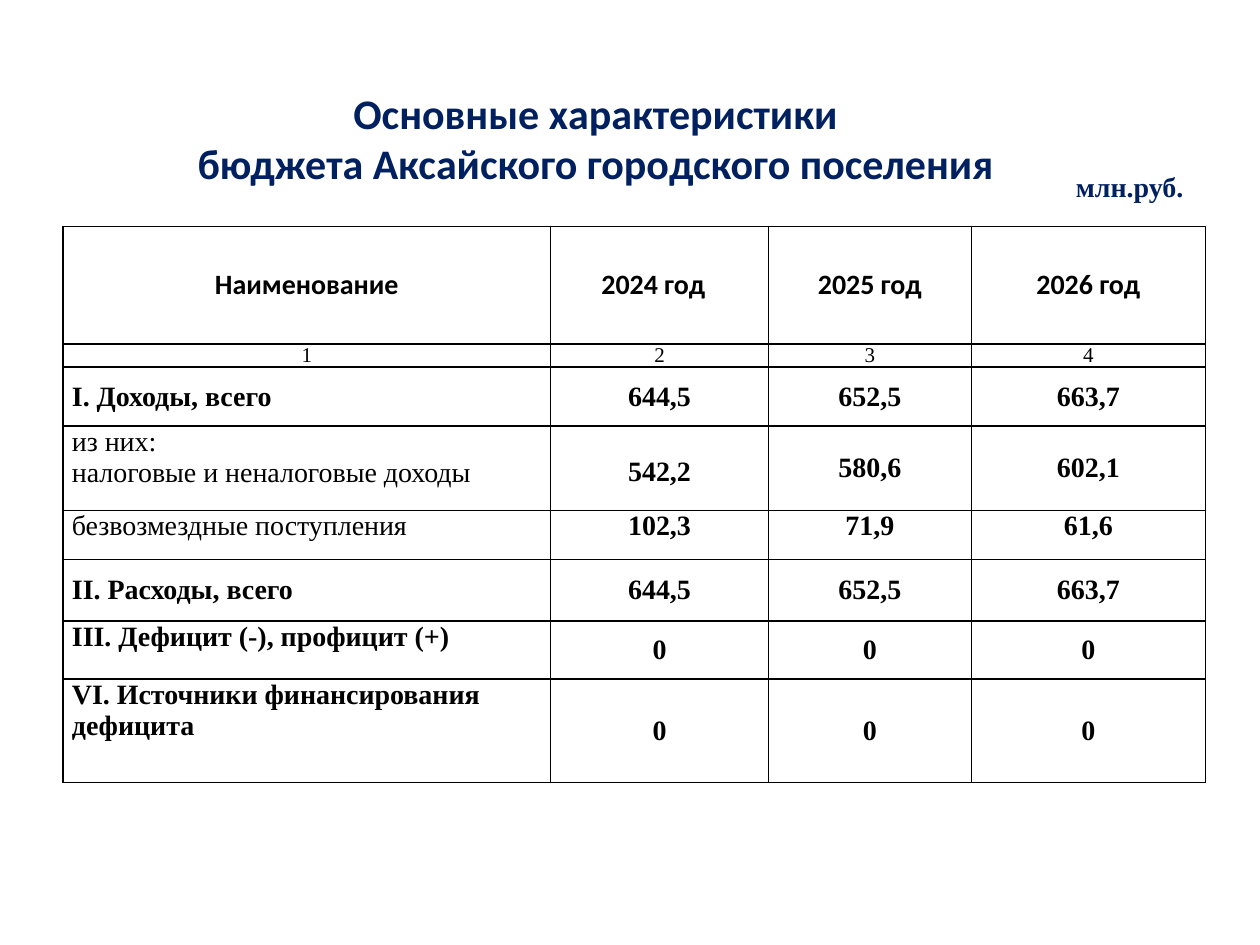
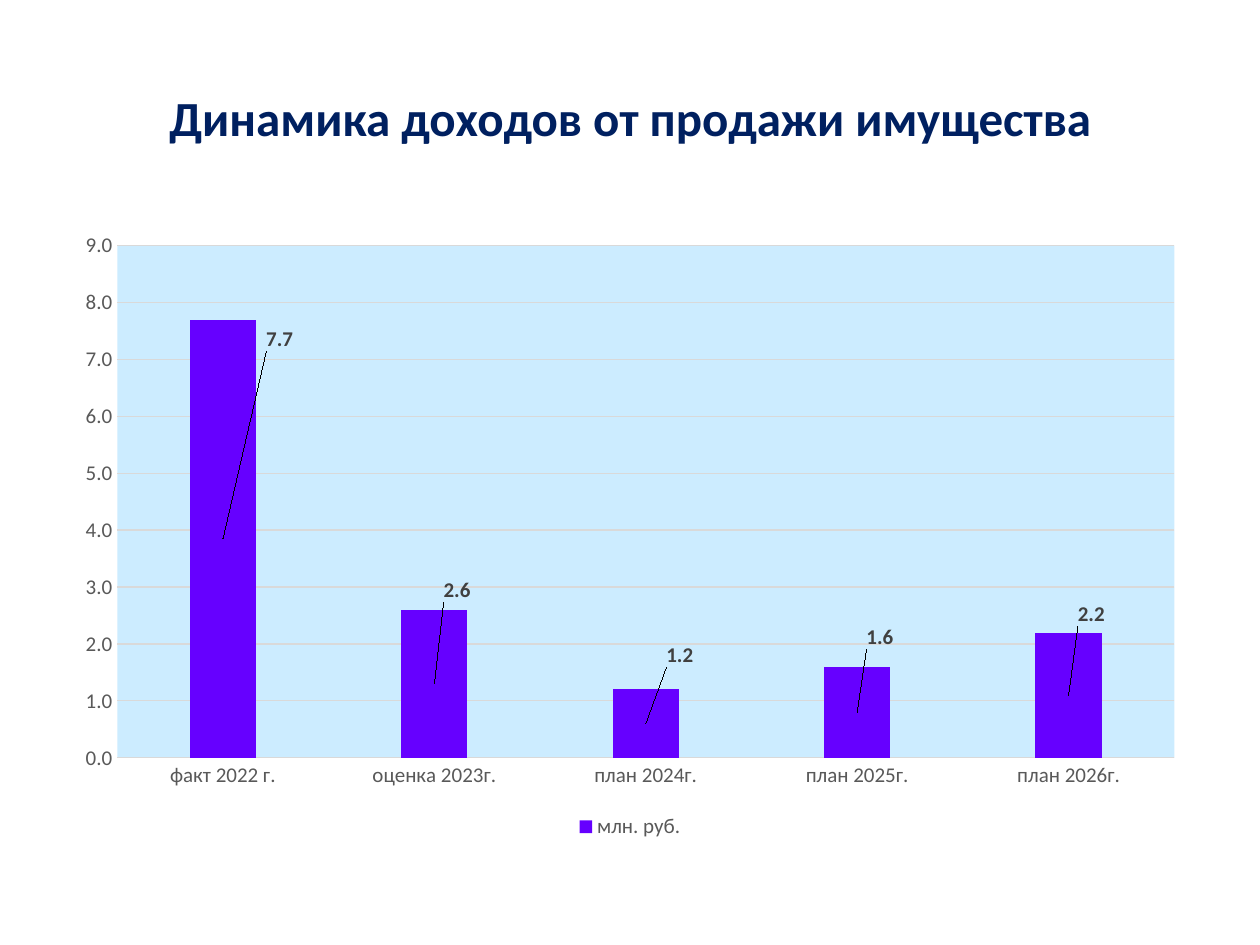
from pptx import Presentation
from pptx.chart.data import CategoryChartData
from pptx.dml.color import RGBColor
from pptx.enum.chart import (XL_CHART_TYPE, XL_LABEL_POSITION,
                             XL_LEGEND_POSITION, XL_TICK_MARK)
from pptx.enum.text import MSO_ANCHOR, PP_ALIGN
from pptx.oxml import parse_xml
from pptx.oxml.ns import nsdecls, qn
from pptx.util import Cm, Pt

COLORS = {"navy": "002060", "black": "000000", "gray": "595959",
          "dark": "404040", "grid": "D9D9D9", "sky": "CCECFF",
          "violet": "6600FF"}
SANS, SERIF = "Calibri", "Times New Roman"
TOP, MID, LOW = MSO_ANCHOR.TOP, MSO_ANCHOR.MIDDLE, MSO_ANCHOR.BOTTOM

# Budget table: widths, then (height, label anchor, value anchor, bold label, texts)
WIDTHS = [9.83, 4.39, 4.09, 4.72]
ROWS = [
    (1.19, MID, MID, True, ["I. Доходы, всего", "644,5", "652,5", "663,7"]),
    (1.7, TOP, MID, False, ["из них:\nналоговые и неналоговые доходы",
                            "542,2", "580,6", "602,1"]),
    (0.99, TOP, TOP, False, ["безвозмездные поступления", "102,3", "71,9", "61,6"]),
    (1.24, MID, MID, True, ["II. Расходы, всего", "644,5", "652,5", "663,7"]),
    (1.17, TOP, MID, True, ["III. Дефицит (-), профицит (+)", "0", "0", "0"]),
    (2.08, TOP, MID, True, ["VI. Источники финансирования дефицита", "0", "0", "0"]),
]

# Property sales: category, value, label shift from the bar centre
SALES = [("факт 2022 г.", 7.7, (0.05, -0.32)),
         ("оценка 2023г.", 2.6, (0.02, -0.15)),
         ("план 2024г.", 1.2, (0.03, -0.11)),
         ("план 2025г.", 1.6, (0.02, -0.12)),
         ("план 2026г.", 2.2, (0.02, -0.13))]


def rgb(name):
    return RGBColor.from_string(COLORS[name])


def set_font(font, size, color, face=SANS, bold=False):
    font.size, font.name, font.bold = Pt(size), face, bold
    font.color.rgb = rgb(color)


def write(frame, text, size, color, face=SANS, bold=False, align=PP_ALIGN.CENTER):
    frame.text = text
    for para in frame.paragraphs:
        para.alignment = align
        set_font(para.font, size, color, face, bold)


def add_page(deck, title, box, size):
    page = deck.slides.add_slide(deck.slide_layouts[5])
    head = page.shapes.title
    head.left, head.top, head.width, head.height = map(Cm, box)
    head.text_frame.vertical_anchor = MID
    write(head.text_frame, title, size, "navy", bold=True)
    return page


def add_note(page, text, box):
    frame = page.shapes.add_textbox(*map(Cm, box)).text_frame
    frame.word_wrap = True
    frame.vertical_anchor = LOW
    write(frame, text, 16, "navy", SERIF, True, PP_ALIGN.LEFT)


def add_edges(cell):
    props = cell._tc.get_or_add_tcPr()
    for spot, side in enumerate(("lnL", "lnR", "lnT", "lnB")):
        props.insert(spot, parse_xml(
            f'<a:{side} {nsdecls("a")} w="12700"><a:solidFill>'
            f'<a:srgbClr val="{COLORS["black"]}"/></a:solidFill></a:{side}>'))


def fill_cell(cell, text, size, face, bold, anchor=MID, pad=0.13,
              align=PP_ALIGN.CENTER):
    cell.fill.background()
    cell.margin_left = cell.margin_right = Cm(pad)
    cell.margin_top = cell.margin_bottom = 0
    cell.vertical_anchor = anchor
    write(cell.text_frame, text, size, "black", face, bold, align)
    add_edges(cell)


def add_budget(page):
    highs = [2.36, 0.36] + [row[0] for row in ROWS]
    box = (1.27, 4.57, sum(WIDTHS), sum(highs))
    table = page.shapes.add_table(len(highs), len(WIDTHS), *map(Cm, box)).table
    for col, width in zip(table.columns, WIDTHS):
        col.width = Cm(width)
    for row, high in zip(table.rows, highs):
        row.height = Cm(high)

    # Heading and column numbers
    heads = ["Наименование", "2024 год", "2025 год", "2026 год"]
    for col, text in enumerate(heads):
        fill_cell(table.cell(0, col), text, 16, SANS, True)
        fill_cell(table.cell(1, col), str(col + 1), 12, SERIF, False)
    table.cell(0, 1).margin_right = Cm(0.38)

    # Labels and sums
    for row, (_, side, mid, bold, texts) in enumerate(ROWS, 2):
        fill_cell(table.cell(row, 0), texts[0], 16, SERIF, bold, side, 0.18,
                  PP_ALIGN.LEFT)
        for col, text in enumerate(texts[1:], 1):
            fill_cell(table.cell(row, col), text, 16, SERIF, True, mid, 0.18)
    taxes = table.cell(3, 1)
    taxes.vertical_anchor = TOP
    taxes.margin_top = Cm(0.62)


def style_axis(axis):
    axis.major_tick_mark = axis.minor_tick_mark = XL_TICK_MARK.NONE
    set_font(axis.tick_labels.font, 12, "gray")


def style_line(line):
    line.color.rgb = rgb("grid")
    line.width = Pt(0.75)


def add_labels(series):
    for spot, (_, _, (dx, dy)) in enumerate(SALES):
        label = series.points[spot].data_label
        set_font(label.font, 12, "dark", bold=True)
        label.position = XL_LABEL_POSITION.CENTER
    for node, (_, _, (dx, dy)) in zip(series._element.iter(qn("c:dLbl")), SALES):
        node.insert(1, parse_xml(
            f'<c:layout {nsdecls("c")}><c:manualLayout>'
            f'<c:x val="{dx}"/><c:y val="{dy}"/></c:manualLayout></c:layout>'))


def add_sales(page):
    data = CategoryChartData(number_format="0.0")
    data.categories = [name for name, _, _ in SALES]
    data.add_series("млн. руб.", [value for _, value, _ in SALES])
    chart = page.shapes.add_chart(XL_CHART_TYPE.COLUMN_STACKED, Cm(1.27), Cm(4.45),
                                  Cm(22.86), Cm(12.57), data).chart
    set_font(chart.font, 10, "black")
    chart.has_title = False
    chart.has_legend = True
    chart.legend.position = XL_LEGEND_POSITION.BOTTOM
    chart.legend.include_in_layout = False
    set_font(chart.legend.font, 12, "gray")

    # Axes and plot area
    names, values = chart.category_axis, chart.value_axis
    style_axis(names)
    style_axis(values)
    style_line(names.format.line)
    style_line(values.major_gridlines.format.line)
    values.format.line.fill.background()
    values.minimum_scale, values.maximum_scale, values.major_unit = 0, 9, 1
    values.tick_labels.number_format = "0.0"
    values.tick_labels.number_format_is_linked = False
    chart._chartSpace.chart.plotArea.append(parse_xml(
        f'<c:spPr {nsdecls("c", "a")}><a:solidFill>'
        f'<a:srgbClr val="{COLORS["sky"]}"/></a:solidFill></c:spPr>'))

    # Columns
    plot = chart.plots[0]
    plot.vary_by_categories = False
    plot.gap_width, plot.overlap = 219, 100
    series = plot.series[0]
    series.format.fill.solid()
    series.format.fill.fore_color.rgb = rgb("violet")
    add_labels(series)


def main():
    deck = Presentation()
    deck.slide_width, deck.slide_height = Cm(25.4), Cm(19.05)

    # Budget slide
    page = add_page(deck, "Основные характеристики\vбюджета Аксайского городского поселения",
                    (2.77, 1.4, 18.47, 2.74), 24)
    add_budget(page)
    add_note(page, "млн.руб.", (21.44, 2.59, 3.96, 1.63))

    # Sales slide
    page = add_page(deck, "Динамика доходов от продажи имущества",
                    (1.27, 0.76, 22.86, 3.18), 28)
    add_sales(page)
    deck.save("out.pptx")


if __name__ == "__main__":
    main()
